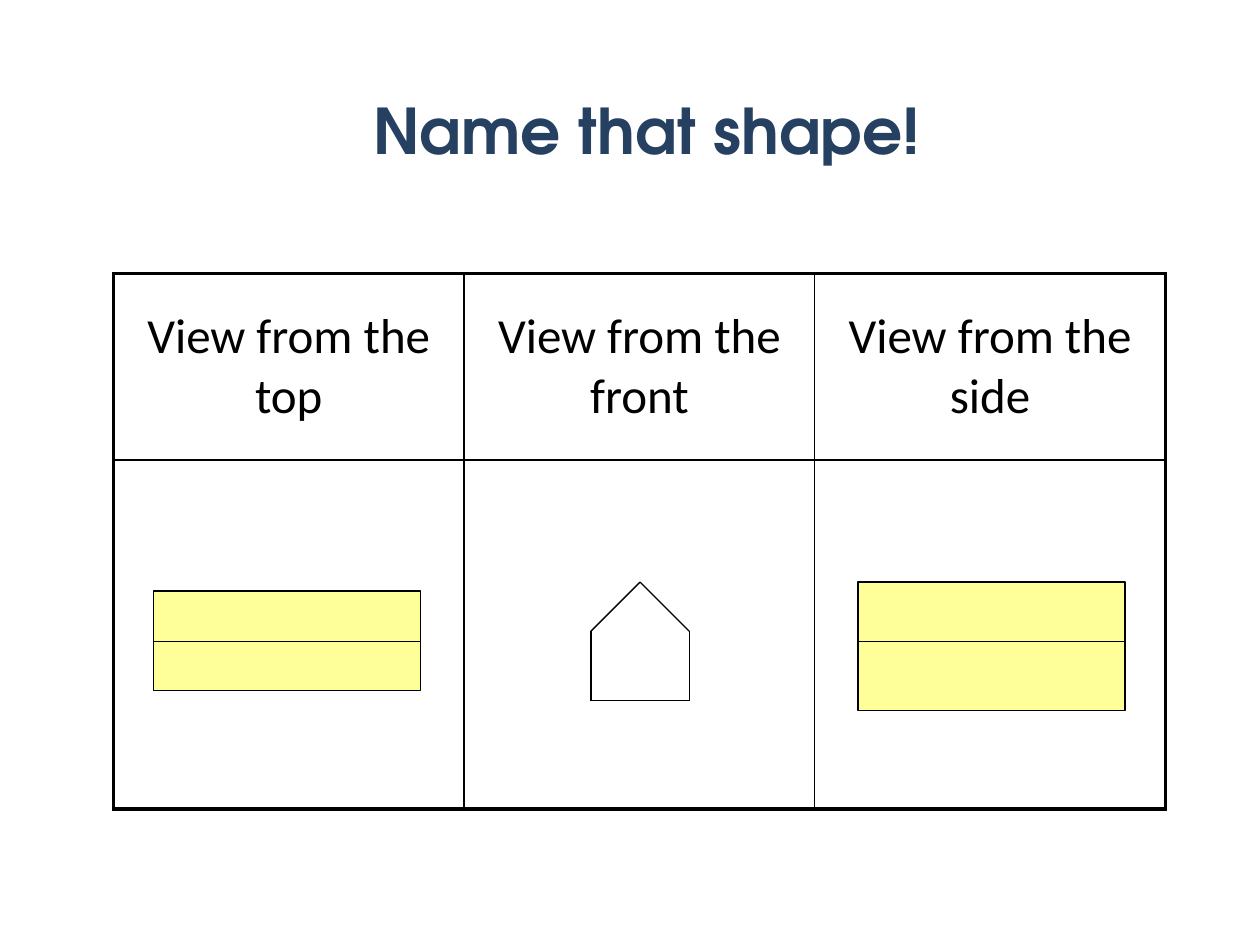
from itertools import pairwise

from lxml import etree
from pptx import Presentation
from pptx.dml.color import RGBColor
from pptx.enum.shapes import MSO_CONNECTOR, MSO_SHAPE
from pptx.enum.text import MSO_ANCHOR, PP_ALIGN
from pptx.oxml.ns import qn
from pptx.util import Inches, Pt

RECT = MSO_SHAPE.RECTANGLE
STRAIGHT = MSO_CONNECTOR.STRAIGHT
CENTER = PP_ALIGN.CENTER
MIDDLE = MSO_ANCHOR.MIDDLE

TITLE = "Name that shape!"
HEADS = ["View from the top", "View from the front", "View from the side"]
BLACK, NAVY, YELLOW = "000000", "254061", "FFFF99"
TABLE = (0.9, 2.17, 8.35, 4.25)
ROWS = [1.48, 2.77]
THICK, THIN = 2.25, 1
VIEWS = [(1.22, 4.69, 2.12, 0.79), (6.81, 4.62, 2.12, 1.02)]
RIDGE = 5.09
HOUSE = [(5.39, 5.56), (4.69, 5.56), (4.69, 5.01), (5.08, 4.62),
         (5.47, 5.01), (5.47, 5.56), (5.31, 5.56)]


def color(code):
    return RGBColor.from_string(code)


def inches(values):
    return [Inches(v) for v in values]


def outline(shape):
    shape.line.color.rgb = color(BLACK)
    shape.line.width = Pt(0.75)


def style(para, font, size, code, bold=False):
    para.alignment = CENTER
    para.font.name = font
    para.font.size = Pt(size)
    para.font.bold = bold
    para.font.color.rgb = color(code)


def border(cell, widths):
    """Draw the cell's edges; widths run left, right, top, bottom."""
    props = cell._tc.get_or_add_tcPr()
    for i, (side, width) in enumerate(zip("LRTB", widths)):
        edge = etree.Element(qn(f"a:ln{side}"), w=str(Pt(width)))
        fill = etree.SubElement(edge, qn("a:solidFill"))
        etree.SubElement(fill, qn("a:srgbClr"), val=BLACK)
        props.insert(i, edge)


def add_grid(shapes):
    cols = len(HEADS)
    table = shapes.add_table(len(ROWS), cols, *inches(TABLE)).table
    table.first_row = table.horz_banding = False
    for col in table.columns:
        col.width = Inches(TABLE[2] / cols)
    for r, high in enumerate(ROWS):
        table.rows[r].height = Inches(high)
        for c, head in enumerate(HEADS):
            cell = table.cell(r, c)
            cell.fill.background()
            outer = (c == 0, c == cols - 1, r == 0, r == len(ROWS) - 1)
            border(cell, [THICK if out else THIN for out in outer])
            if r == 0:
                cell.text = head
                cell.vertical_anchor = MIDDLE
                para = cell.text_frame.paragraphs[0]
                para.space_before = Pt(5.6)
                style(para, "Calibri", 28, BLACK)


def add_line(shapes, start, end):
    line = shapes.add_connector(STRAIGHT, *inches(start + end))
    outline(line)
    etree.SubElement(line._element.spPr, qn("a:effectLst"))


def add_view(shapes, box):
    """Draw a yellow face with the roof's ridge line across it."""
    face = shapes.add_shape(RECT, *inches(box))
    face.shadow.inherit = False
    face.fill.solid()
    face.fill.fore_color.rgb = color(YELLOW)
    outline(face)
    left, _, width, _ = box
    add_line(shapes, (left, RIDGE), (left + width, RIDGE))


def add_house(shapes):
    group = shapes.add_group_shape()
    for start, end in pairwise(HOUSE):
        add_line(group.shapes, start, end)


def main():
    deck = Presentation()
    deck.slide_width, deck.slide_height = inches((10, 7.5))
    shapes = deck.slides.add_slide(deck.slide_layouts[5]).shapes

    title = shapes.title
    title.left, title.top, title.width, title.height = inches(
        (2.38, 0.67, 5.51, 0.71))
    title.text_frame.text = TITLE
    title.text_frame.word_wrap = False
    title.text_frame.vertical_anchor = MIDDLE
    style(title.text_frame.paragraphs[0], "TeX Gyre Adventor", 36, NAVY, True)

    add_grid(shapes)
    for box in VIEWS:
        add_view(shapes, box)
    add_house(shapes)
    deck.save("out.pptx")


if __name__ == "__main__":
    main()
